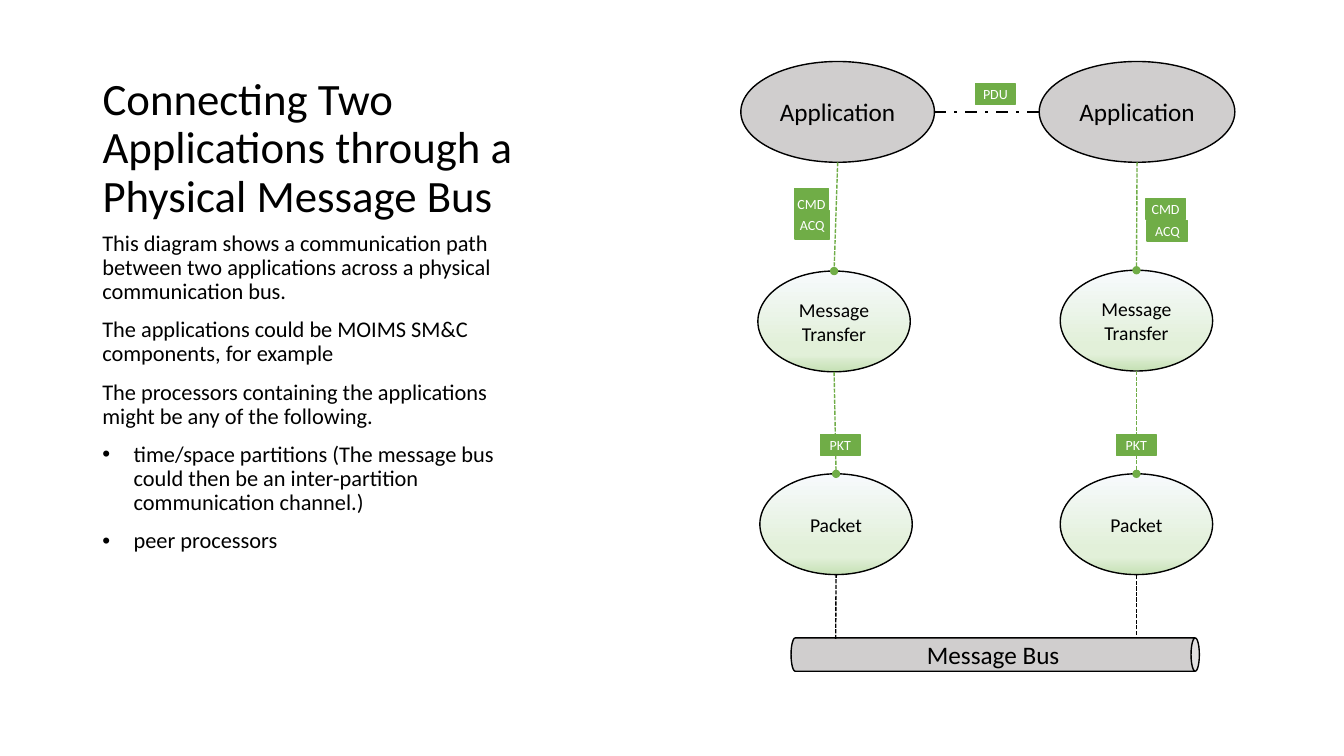
from dataclasses import dataclass

from lxml import etree
from pptx import Presentation
from pptx import util as u
from pptx.dml.color import RGBColor
from pptx.enum import dml, shapes, text
from pptx.oxml.ns import qn

COLOURS = {
    "black": "000000",
    "white": "FFFFFF",
    "grey": "D0CECE",
    "green": "70AD47",
}
LAYER_GRADIENT = [(0, "F7FAFD"), (74, "E2F0D9"), (83, "E2F0D9"), (100, "C5E0B4")]
FONT = "Calibri"


@dataclass
class Box:
    """A labelled shape; lengths in centimetres."""
    label: str
    left: float
    top: float
    width: float
    height: float

    @property
    def centre(self) -> float:
        return self.left + self.width / 2

    @property
    def middle(self) -> float:
        return self.top + self.height / 2

    @property
    def bottom(self) -> float:
        return self.top + self.height


@dataclass
class Stack:
    """One application with the layers below it and the point where it meets the bus."""
    application: Box
    transfer: Box
    packet: Box
    bus_x: float
    bus_y: float


TITLE = Box("Connecting Two Applications through a Physical Message Bus", 2.33, 1.27, 10.92, 4.45)
BODY = [
    ("This diagram shows a communication path between two applications across a physical "
     "communication bus.", False),
    ("The applications could be MOIMS SM&C components, for example", False),
    ("The processors containing the applications might be any of the following.", False),
    ("time/space partitions (The message bus could then be an inter-partition "
     "communication channel.)", True),
    ("peer processors", True),
]
STACKS = [
    Stack(Box("Application", 18.67, 1.55, 4.88, 2.54),
          Box("Message Transfer", 19.1, 6.83, 3.84, 2.54),
          Box("Packet", 19.15, 11.94, 3.84, 2.54), 21.06, 16.1),
    Stack(Box("Application", 26.19, 1.55, 4.93, 2.54),
          Box("Message Transfer", 26.72, 6.81, 3.84, 2.54),
          Box("Packet", 26.72, 11.94, 3.84, 2.54), 28.64, 16),
]
BUS = Box("Message Bus", 24.66, 11.35, 0.84, 10.29)
TAGS = [
    Box("PDU", 24.59, 2.11, 0.99, 0.53),
    Box("CMD", 20.02, 4.75, 0.86, 0.76),
    Box("ACQ", 20.04, 5.31, 0.86, 0.71),
    Box("CMD", 28.88, 5, 0.99, 0.53),
    Box("ACQ", 28.91, 5.56, 1.02, 0.51),
    Box("PKT", 20.68, 10.95, 0.99, 0.53),
    Box("PKT", 28.14, 10.95, 0.99, 0.53),
]


def rgb(name: str) -> RGBColor:
    return RGBColor.from_string(COLOURS[name])


def add_run(paragraph, words: str, size: float, colour: str = "black") -> None:
    run = paragraph.add_run()
    run.text = words
    run.font.name = FONT
    run.font.size = u.Pt(size)
    run.font.color.rgb = rgb(colour)


def add_box(slide, box: Box, kind, size: float, fill: str | None = "grey",
            line: str = "black", ink: str = "black", side_inset: float = 0):
    """Draw a labelled shape; a fill of None gives the layer gradient."""
    shape = slide.shapes.add_shape(
        kind, u.Cm(box.left), u.Cm(box.top), u.Cm(box.width), u.Cm(box.height))
    shape.shadow.inherit = False
    if fill is None:
        fill_with_gradient(shape)
    else:
        shape.fill.solid()
        shape.fill.fore_color.rgb = rgb(fill)
    shape.line.color.rgb = rgb(line)
    shape.line.width = u.Pt(1)
    frame = shape.text_frame
    frame.word_wrap = True
    frame.vertical_anchor = text.MSO_ANCHOR.MIDDLE
    frame.margin_left = frame.margin_right = u.Cm(side_inset)
    paragraph = frame.paragraphs[0]
    paragraph.alignment = text.PP_ALIGN.CENTER
    add_run(paragraph, box.label, size, ink)
    return shape


def fill_with_gradient(shape) -> None:
    shape.fill.gradient()
    shape.fill.gradient_angle = 270
    stops = shape._element.spPr.find(qn("a:gradFill")).find(qn("a:gsLst"))
    for stop in list(stops):
        stops.remove(stop)
    for percent, colour in LAYER_GRADIENT:
        stop = etree.SubElement(stops, qn("a:gs"), pos=str(percent * 1000))
        etree.SubElement(stop, qn("a:srgbClr"), val=colour)


def add_line(slide, start: tuple[float, float], end: tuple[float, float], colour: str = "black",
             width: float = 1, dash=dml.MSO_LINE.SQUARE_DOT, oval_end: bool = False) -> None:
    connector = slide.shapes.add_connector(
        shapes.MSO_CONNECTOR.STRAIGHT, *(u.Cm(length) for length in (*start, *end)))
    connector.line.color.rgb = rgb(colour)
    connector.line.width = u.Pt(width)
    connector.line.dash_style = dash
    properties = connector._element.spPr
    if oval_end:
        etree.SubElement(properties.find(qn("a:ln")), qn("a:tailEnd"), type="oval")
    etree.SubElement(properties, qn("a:effectLst"))


def add_stack(slide, stack: Stack) -> None:
    ellipse = shapes.MSO_SHAPE.OVAL
    add_box(slide, stack.application, ellipse, 18, side_inset=0.25)
    for upper, layer in ((stack.application, stack.transfer), (stack.transfer, stack.packet)):
        add_box(slide, layer, ellipse, 14, fill=None)
        add_line(slide, (upper.centre, upper.bottom), (layer.centre, layer.top),
                 "green", oval_end=True)
    add_line(slide, (stack.bus_x, stack.bus_y), (stack.packet.centre, stack.packet.bottom))


def add_title(slide) -> None:
    title = slide.shapes.title
    title.left, title.top = u.Cm(TITLE.left), u.Cm(TITLE.top)
    title.width, title.height = u.Cm(TITLE.width), u.Cm(TITLE.height)
    frame = title.text_frame
    frame.auto_size = text.MSO_AUTO_SIZE.NONE
    frame.vertical_anchor = text.MSO_ANCHOR.BOTTOM
    paragraph = frame.paragraphs[0]
    paragraph.alignment = text.PP_ALIGN.LEFT
    paragraph.line_spacing = 0.9
    add_run(paragraph, TITLE.label, 32)


def add_body(slide) -> None:
    frame = slide.shapes.add_textbox(
        u.Cm(TITLE.left), u.Cm(TITLE.bottom), u.Cm(TITLE.width), u.Cm(10.59)).text_frame
    frame.word_wrap = True
    for index, (words, bulleted) in enumerate(BODY):
        paragraph = frame.add_paragraph() if index else frame.paragraphs[0]
        paragraph.line_spacing = 0.9
        paragraph.space_before = u.Pt(10)
        if bulleted:
            properties = paragraph._p.get_or_add_pPr()
            properties.set("marL", str(u.Cm(0.79)))
            properties.set("indent", str(-u.Cm(0.79)))
            etree.SubElement(properties, qn("a:buFont"), typeface="Arial")
            etree.SubElement(properties, qn("a:buChar"), char="•")
        add_run(paragraph, words, 16)


def add_bus(slide) -> None:
    bus = add_box(slide, BUS, shapes.MSO_SHAPE.CAN, 18, side_inset=0.25)
    bus.rotation = 90
    bus.text_frame._txBody.bodyPr.set("vert", "vert270")


def main() -> None:
    presentation = Presentation()
    presentation.slide_width, presentation.slide_height = u.Cm(33.87), u.Cm(19.05)
    slide = presentation.slides.add_slide(presentation.slide_layouts[5])
    add_title(slide)
    add_body(slide)
    add_bus(slide)
    for stack in STACKS:
        add_stack(slide, stack)
    first, second = (stack.application for stack in STACKS)
    add_line(slide, (first.left + first.width, first.middle), (second.left, second.middle),
             width=2, dash=dml.MSO_LINE.DASH_DOT)
    for tag in TAGS:
        add_box(slide, tag, shapes.MSO_SHAPE.RECTANGLE, 10, "green", "green", "white")
    presentation.save("out.pptx")


if __name__ == "__main__":
    main()
